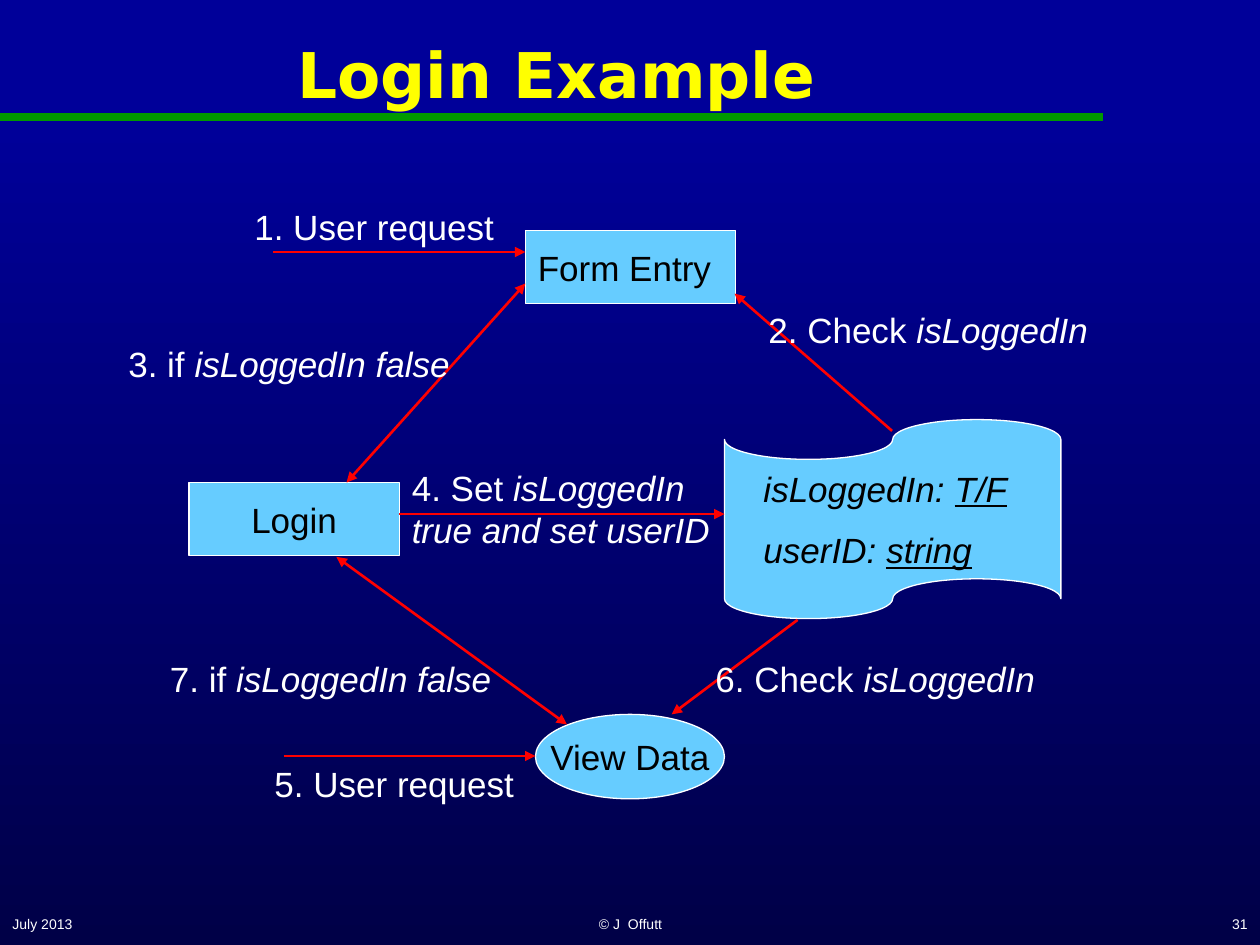
from dataclasses import dataclass

from pptx import Presentation
from pptx.dml.color import RGBColor as Rgb
from pptx.enum.shapes import MSO_CONNECTOR as Connector, MSO_SHAPE as Shape
from pptx.enum.text import MSO_ANCHOR as Anchor, PP_ALIGN as Align
from pptx.oxml.ns import qn
from pptx.util import Inches, Pt
from lxml.etree import SubElement


@dataclass(frozen=True)
class Theme:
    """Colours, fonts and type sizes of the slide."""
    sky: Rgb = Rgb.from_string("000099")
    deep: Rgb = Rgb.from_string("000047")
    rule: Rgb = Rgb.from_string("009900")
    title: Rgb = Rgb.from_string("FFFF00")
    node: Rgb = Rgb.from_string("66CCFF")
    arrow: Rgb = Rgb.from_string("FF0000")
    light: Rgb = Rgb.from_string("FFFFFF")
    dark: Rgb = Rgb.from_string("000000")
    body_font: str = "Arial"
    title_font: str = "DejaVu Sans"
    title_size: int = 36
    body_size: int = 20
    footer_size: int = 8


THEME = Theme()
ITALIC = {"italic": True}
UNDERLINED = {"italic": True, "underline": True}
BODY = {"name": THEME.body_font, "size": Pt(THEME.body_size)}
LABEL = BODY | {"color": THEME.light}
NODE = BODY | {"color": THEME.dark}
FOOTER = LABEL | {"size": Pt(THEME.footer_size)}
TITLE = {"name": THEME.title_font, "size": Pt(THEME.title_size),
         "bold": True, "color": THEME.title}

FOOTERS = [
    (0, 2.08, "July 2013", Align.LEFT),
    (3.42, 3.17, "© J  Offutt", Align.CENTER),
    (7.92, 2.08, "31", Align.RIGHT),
]
NODES = [
    (Shape.RECTANGLE, (1.5, 3.83, 1.67, 0.58), [[("Login", {})]], Align.CENTER, 0.1),
    (Shape.RECTANGLE, (4.17, 1.83, 1.67, 0.58), [[("Form Entry", {})]], Align.LEFT, 0.1),
    (Shape.OVAL, (4.25, 5.67, 1.5, 0.67), [[("View Data", {})]], Align.CENTER, 0),
    (Shape.FLOWCHART_PUNCHED_TAPE, (5.75, 3.33, 2.67, 1.58),
     [[("isLoggedIn: ", ITALIC), ("T/F", UNDERLINED)],
      [("userID: ", ITALIC), ("string", UNDERLINED)]], Align.LEFT, 0.31),
]
ARROWS = [
    ((2.17, 2), (4.17, 2), False),
    ((7.08, 3.42), (5.83, 2.33), False),
    ((2.75, 3.83), (4.17, 2.25), True),
    ((3.17, 4.08), (5.75, 4.08), False),
    ((2.25, 6), (4.25, 6), False),
    ((6.33, 4.92), (5.33, 5.67), False),
    ((4.5, 5.75), (2.67, 4.42), True),
]
LABELS = [
    (1.92, 1.58, 2.25, "1. User request", ""),
    (6, 2.4, 2.83, "2. Check ", "isLoggedIn"),
    (0.92, 2.67, 2.83, "3. if ", "isLoggedIn false"),
    (3.17, 3.65, 2.83, "4. Set ", "isLoggedIn true and set userID"),
    (2.08, 6, 2.25, "5. User request", ""),
    (5.58, 5.17, 2.83, "6. Check ", "isLoggedIn"),
    (1.25, 5.17, 2.83, "7. if ", "isLoggedIn false"),
]


def apply_format(font, values):
    """Set font attributes from a dict of format values."""
    for name, value in values.items():
        if name == "color":
            font.color.rgb = value
        else:
            setattr(font, name, value)


def write_text(frame, paragraphs, style, align=Align.LEFT, **layout):
    """Fill a text frame with paragraphs of (text, format) spans."""
    for name, value in ({"word_wrap": True} | layout).items():
        setattr(frame, name, value)
    for index, spans in enumerate(paragraphs):
        para = frame.add_paragraph() if index else frame.paragraphs[0]
        para.alignment = align
        if index:
            para.space_before = Pt(11)
        for text, extra in spans:
            span = para.add_run()
            span.text = text
            apply_format(span.font, style | extra)


def add_text(page, at, spans, style, align=Align.LEFT, anchor=Anchor.TOP):
    """Add a text box holding one paragraph."""
    box = page.shapes.add_textbox(*map(Inches, at))
    write_text(box.text_frame, [spans], style, align, vertical_anchor=anchor)


def add_node(page, kind, at, paragraphs, align, inset):
    """Add a filled flow node with its text."""
    node = page.shapes.add_shape(kind, *map(Inches, at))
    node.shadow.inherit = False
    node.fill.solid()
    node.fill.fore_color.rgb = THEME.node
    node.line.color.rgb = THEME.light
    node.line.width = Pt(0.75)
    write_text(node.text_frame, paragraphs, NODE, align,
               vertical_anchor=Anchor.MIDDLE, word_wrap=kind != Shape.OVAL,
               margin_left=Inches(inset), margin_right=Inches(inset))


def add_line(page, start, end, color, width, heads=()):
    """Add a straight line with arrowheads at the named ends."""
    line = page.shapes.add_connector(Connector.STRAIGHT, *map(Inches, start + end))
    line.line.color.rgb = color
    line.line.width = Pt(width)
    outline = line.line._get_or_add_ln()
    for head in heads:
        SubElement(outline, qn(f"a:{head}"), type="triangle")
    SubElement(line._element.spPr, qn("a:effectLst"))


def paint_background(page):
    """Fill the page with a gradient that darkens downwards."""
    fill = page.background.fill
    fill.gradient()
    fill.gradient_angle = 270
    stops = [(0.13, THEME.sky), (1, THEME.deep)]
    for stop, (position, color) in zip(fill.gradient_stops, stops):
        stop.position = position
        stop.color.rgb = color


def main():
    """Build the login example slide and save it."""
    deck = Presentation()
    deck.slide_width, deck.slide_height = Inches(10), Inches(7.5)
    page = deck.slides.add_slide(deck.slide_layouts[6])
    paint_background(page)
    add_line(page, (0, 0.93), (8.75, 0.93), THEME.rule, 4.5)
    for left, width, text, align in FOOTERS:
        add_text(page, (left, 7.17, width, 0.33), [(text, {})], FOOTER, align, Anchor.MIDDLE)
    add_text(page, (0.08, 0.08, 8.67, 1), [("Login Example", {})], TITLE,
             Align.CENTER, Anchor.MIDDLE)
    for node in NODES:
        add_node(page, *node)
    for start, end, both in ARROWS:
        add_line(page, start, end, THEME.arrow, 1.5,
                 ("headEnd", "tailEnd") if both else ("tailEnd",))
    for left, top, width, step, detail in LABELS:
        spans = [(step, {})] + ([(detail, ITALIC)] if detail else [])
        height = 0.77 if "userID" in detail else 0.44
        add_text(page, (left, top, width, height), spans, LABEL)
    deck.save("out.pptx")


if __name__ == "__main__":
    main()
